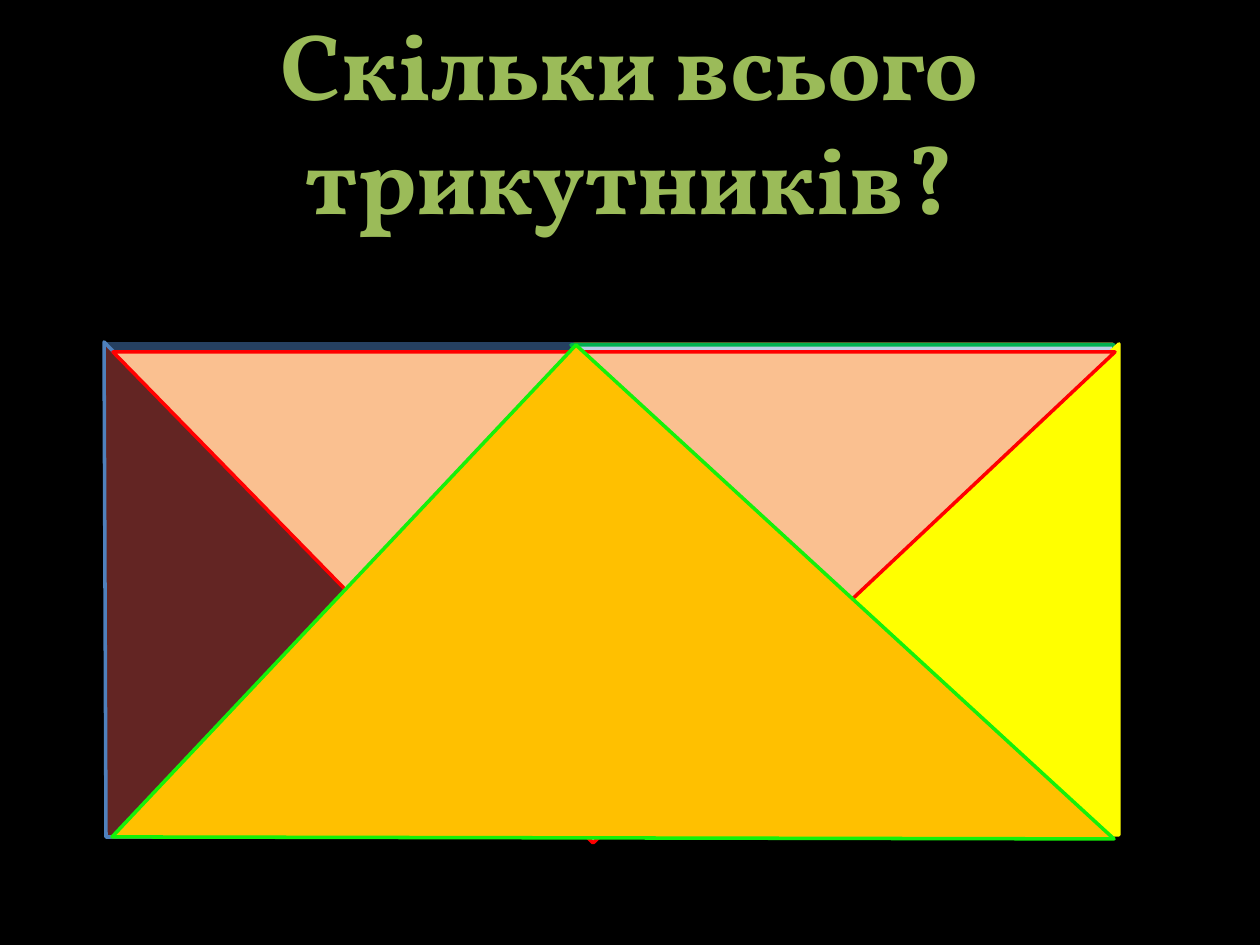
import pptx
import pptx.dml.color
import pptx.enum.shapes
import pptx.enum.text
import pptx.util

PX = 914400 / 126
SLIDE = (1260, 945)

THEME = {
    "background": "000000",
    "title": "9BBB59",
    "outline": "4F6228",
    "font": "Vollkorn",
    "title_size": 54,
    "line_width": 2,
}

TITLE = "Скільки всього трикутників?"
TITLE_BOX = (0, 0, 1260, 242)
FRAME = (108, 344, 1004, 493)

# Corners, fill and line, from back to front
TRIANGLES = [
    ([(108, 345), (588, 838), (1110, 345)], None, THEME["outline"]),
    ([(107, 835), (571, 344), (1110, 838)], None, THEME["outline"]),
    ([(107, 345), (341, 586), (570, 348)], "3619E1", "3619E1"),
    ([(107, 345), (341, 585), (107, 833)], "FF0000", "FF0000"),
    ([(107, 835), (344, 587), (587, 833)], "14F109", "14F109"),
    ([(571, 345), (1108, 348), (843, 596)], "7030A0", "7030A0"),
    ([(839, 596), (1110, 348), (1110, 835)], "D99694", "D99694"),
    ([(591, 835), (843, 593), (1110, 835)], "00B0F0", "00B0F0"),
    ([(106, 835), (573, 344), (106, 344)], "254061", "254061"),
    ([(104, 342), (591, 835), (106, 837)], "632523", "4F81BD"),
    ([(571, 345), (1111, 838), (1114, 345)], "B9CDE5", "00B050"),
    ([(591, 835), (1119, 344), (1119, 835)], "FFFF00", "FFFF00"),
    ([(113, 352), (593, 843), (1115, 352)], "FAC090", "FF0000"),
    ([(112, 837), (576, 345), (1114, 839)], "FFC000", "14F109"),
]


def emu(lengths):
    return [round(length * PX) for length in lengths]


def rgb(code):
    return pptx.dml.color.RGBColor.from_string(code)


def paint(shape, fill, line):
    shape.shadow.inherit = False
    if fill:
        shape.fill.solid()
        shape.fill.fore_color.rgb = rgb(fill)
    else:
        shape.fill.background()
    shape.line.color.rgb = rgb(line)
    shape.line.width = pptx.util.Pt(THEME["line_width"])


def add_triangle(slide, corners, fill, line):
    start, *others = corners
    outline = slide.shapes.build_freeform(*start, scale=PX)
    outline.add_line_segments(others, close=True)
    paint(outline.convert_to_shape(), fill, line)


def add_title(slide):
    frame = slide.shapes.add_textbox(*emu(TITLE_BOX)).text_frame
    frame.word_wrap = True
    frame.auto_size = pptx.enum.text.MSO_AUTO_SIZE.SHAPE_TO_FIT_TEXT
    paragraph = frame.paragraphs[0]
    paragraph.alignment = pptx.enum.text.PP_ALIGN.CENTER
    run = paragraph.add_run()
    run.text = TITLE
    run.font.name = THEME["font"]
    run.font.size = pptx.util.Pt(THEME["title_size"])
    run.font.bold = True
    run.font.color.rgb = rgb(THEME["title"])


def main():
    deck = pptx.Presentation()
    deck.slide_width, deck.slide_height = emu(SLIDE)
    slide = deck.slides.add_slide(deck.slide_layouts[6])
    slide.background.fill.solid()
    slide.background.fill.fore_color.rgb = rgb(THEME["background"])

    rectangle = pptx.enum.shapes.MSO_SHAPE.RECTANGLE
    paint(slide.shapes.add_shape(rectangle, *emu(FRAME)), None, THEME["outline"])
    for corners, fill, line in TRIANGLES:
        add_triangle(slide, corners, fill, line)
    add_title(slide)
    deck.save("out.pptx")


if __name__ == "__main__":
    main()
